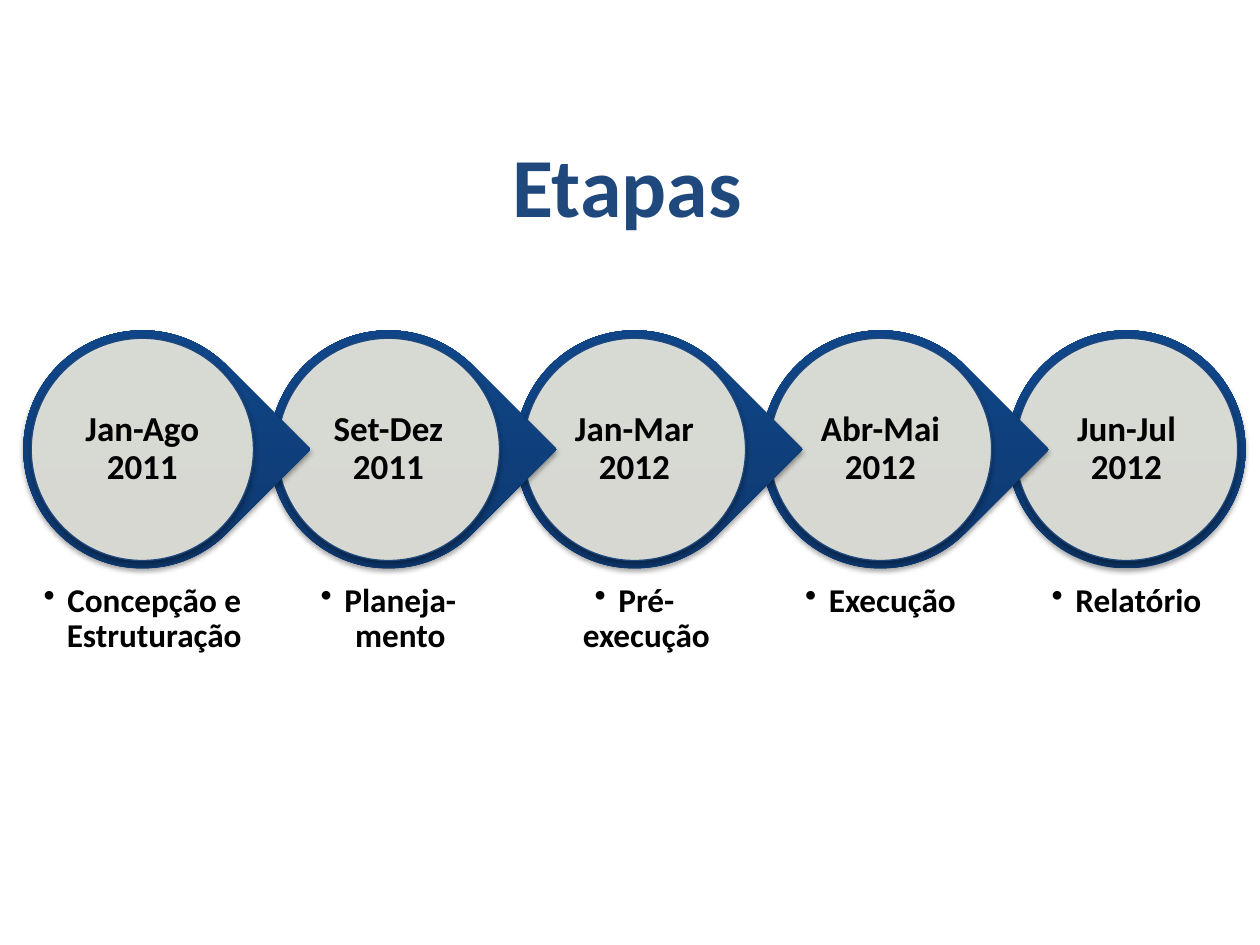
import copy
import lxml.etree
import pptx
import pptx.dml.color
import pptx.enum.shapes
import pptx.enum.text
import pptx.oxml
import pptx.oxml.ns
import pptx.util

Cm = pptx.util.Cm
Pt = pptx.util.Pt
SHAPES = pptx.enum.shapes.MSO_SHAPE
ANCHOR = pptx.enum.text.MSO_ANCHOR
qn = pptx.oxml.ns.qn


def color(value):
    return pptx.dml.color.RGBColor.from_string(value)


def add_label(text, left, top, width, height, size, ink, inset=None, bullet=False):
    box = slide.shapes.add_textbox(Cm(left), Cm(top), Cm(width), Cm(height))
    frame = box.text_frame
    frame.word_wrap = True
    if inset is not None:
        frame.margin_left = frame.margin_right = Cm(inset)
        frame.margin_top = frame.margin_bottom = Cm(inset)
    paragraph = frame.paragraphs[0]
    paragraph.text = text
    paragraph.alignment = pptx.enum.text.PP_ALIGN.CENTER
    if bullet:
        properties = paragraph._p.get_or_add_pPr()
        properties.set("marL", str(Cm(0.48)))
        properties.set("indent", str(-Cm(0.48)))
        lxml.etree.SubElement(properties, qn("a:buChar")).set("char", "•")
    paragraph.font.name = "Calibri"
    paragraph.font.size = Pt(size)
    paragraph.font.bold = True
    paragraph.font.color.rgb = color(ink)
    return frame


presentation = pptx.Presentation()
presentation.slide_width = Cm(25.4)
presentation.slide_height = Cm(19.05)
slide = presentation.slides.add_slide(presentation.slide_layouts[6])

stages = [
    ("Jan-Ago\n2011", "Concepção e\nEstruturação"),
    ("Set-Dez 2011", "Planeja-mento"),
    ("Jan-Mar 2012", "Pré-execução"),
    ("Abr-Mai 2012", "Execução"),
    ("Jun-Jul 2012", "Relatório"),
]
gradient = [(0, "0D3568"), (0.8, "104587"), (1, "0E458A")]
shadow_xml = (
    '<a:outerShdw xmlns:a="http://schemas.openxmlformats.org/drawingml/2006/main" '
    f'blurRad="{Pt(3.1)}" dist="{Pt(1.8)}" dir="5400000" rotWithShape="0">'
    '<a:srgbClr val="000000"><a:alpha val="35000"/></a:srgbClr></a:outerShdw>'
)
first_left, pitch = 0.47, 4.96
ring_top, ring_size = 6.66, 4.8
disc_offset, disc_size = 0.16, 4.48
date_offset, date_size = 0.8, 3.2

for index, (date, activity) in reversed(list(enumerate(stages))):
    left = first_left + index * pitch
    is_last = index == len(stages) - 1

    ring = slide.shapes.add_shape(
        SHAPES.OVAL if is_last else SHAPES.TEAR,
        Cm(left), Cm(ring_top), Cm(ring_size), Cm(ring_size))
    ring.rotation = 0 if is_last else 45
    ring.line.fill.background()
    ring.fill.gradient()
    ring.fill.gradient_angle = 90
    ring_fill = ring._element.spPr.find(qn("a:gradFill"))
    ring_fill.set("rotWithShape", "0")
    stop_list = ring_fill.find(qn("a:gsLst"))
    stop_list.append(copy.deepcopy(stop_list[-1]))
    for stop, (position, shade) in zip(ring.fill.gradient_stops, gradient):
        stop.position = position
        stop.color.rgb = color(shade)

    disc = slide.shapes.add_shape(
        SHAPES.OVAL, Cm(left + disc_offset), Cm(ring_top + disc_offset),
        Cm(disc_size), Cm(disc_size))
    disc.fill.solid()
    disc.fill.fore_color.rgb = color("EEECE1")
    disc_color = disc._element.spPr.find(qn("a:solidFill"))[0]
    lxml.etree.SubElement(disc_color, qn("a:alpha")).set("val", "90000")
    disc.line.color.rgb = color("1F497D")
    disc.line.width = Pt(0.75)

    for circle in (ring, disc):
        circle.shadow.inherit = False
        effects = circle._element.spPr.find(qn("a:effectLst"))
        effects.append(pptx.oxml.parse_xml(shadow_xml))

    date_frame = add_label(date, left + date_offset, ring_top + date_offset,
                           date_size, date_size, 20, "000000", inset=0.08)
    date_frame.vertical_anchor = ANCHOR.MIDDLE
    activity_frame = add_label(activity, left + disc_offset, 11.56, disc_size, 2.64,
                               19, "000000", inset=0.2, bullet=True)
    for frame in (date_frame, activity_frame):
        frame.paragraphs[0].line_spacing = 0.9

title_frame = add_label("Etapas", 1.12, 2.57, 23.04, 2.31, 48, "1F497D")
title_frame.auto_size = pptx.enum.text.MSO_AUTO_SIZE.SHAPE_TO_FIT_TEXT

presentation.save("out.pptx")
